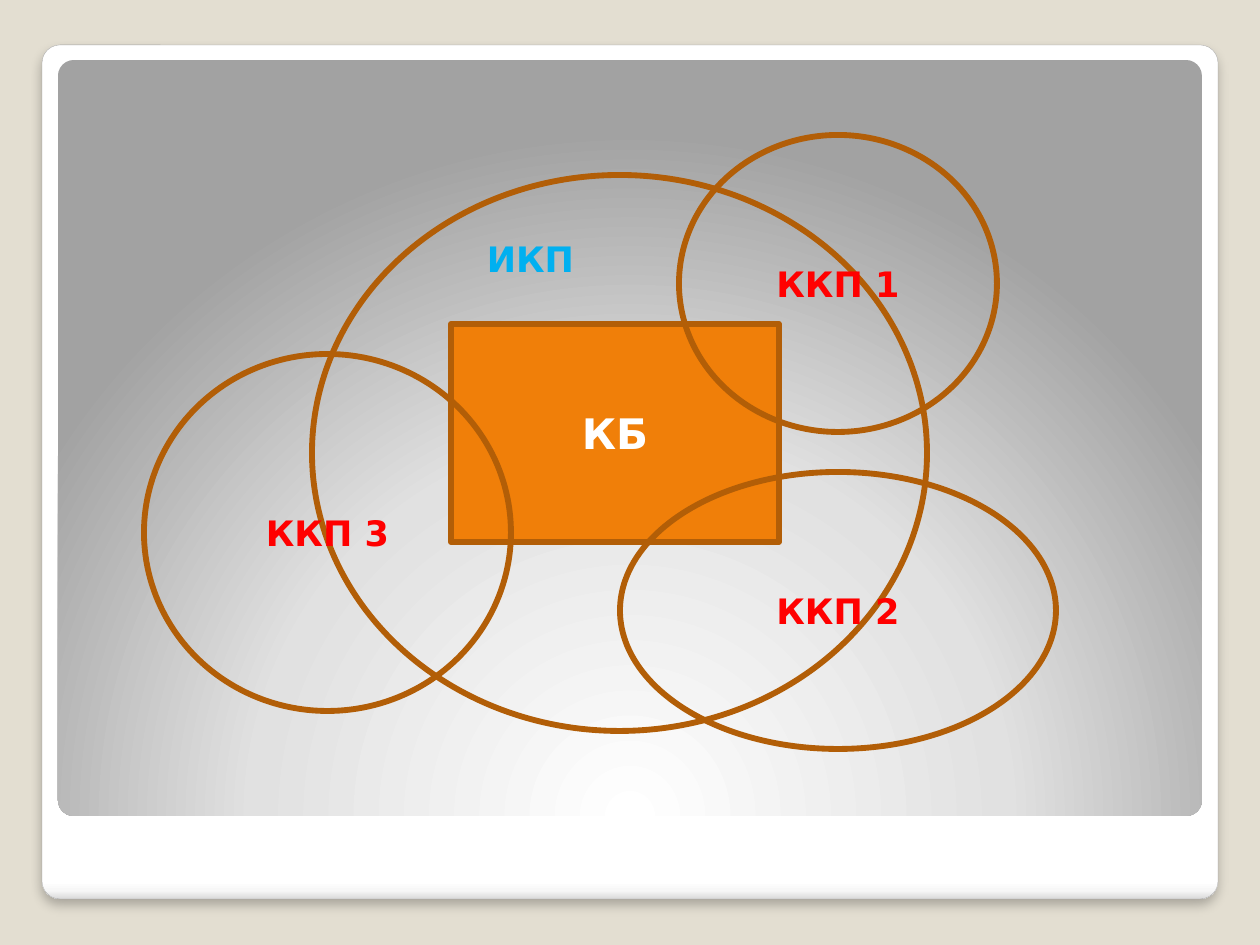
import pptx
import pptx.dml.color
import pptx.enum.shapes
import pptx.enum.text
import pptx.oxml
import pptx.oxml.ns
import pptx.util

EMU_PER_PX = 914400 / 126
FONT = "DejaVu Sans"
COLORS = {
    "background": "E3DED1", "frame edge": "A4A4A4", "box": "F07F09",
    "outline": "B25E07", "white": "FFFFFF", "red": "FF0000", "blue": "00B0F0",
}
KINDS = pptx.enum.shapes.MSO_SHAPE

# Boxes are left, top, width, height in px
FRAME = (42, 45, 1176, 854)
PANEL = (58, 60, 1144, 756)
FRAME_STOPS = [(0, "FFFFFF"), (98, "FFFFFF"), (99, "F7F7F7"), (100, "DADADA")]
PANEL_STOPS = [(0, "FFFFFF"), (55, "E1E1E1"), (100, "A2A2A2")]
DOWNWARD = '<a:lin ang="5400000" scaled="0"/>'
FROM_BELOW = ('<a:path path="circle"><a:fillToRect l="50000" t="175000" '
              'r="50000" b="-75000"/></a:path>')
SOFT_SHADOW = ('<a:outerShdw blurRad="76200" dist="50800" dir="5400000" algn="t" '
               'rotWithShape="0"><a:srgbClr val="000000"><a:alpha val="25000"/>'
               '</a:srgbClr></a:outerShdw>')

# kind, box, fill, label, label size, label colour
DIAGRAM = [
    (KINDS.FLOWCHART_PROCESS, (451, 324, 328, 218), "box", "КБ", 24, "white"),
    (KINDS.OVAL, (312, 175, 615, 556), None, "", 20, "red"),
    (KINDS.OVAL, (679, 135, 318, 297), None, "ККП 1", 20, "red"),
    (KINDS.OVAL, (620, 472, 436, 277), None, "ККП 2", 20, "red"),
    (KINDS.OVAL, (144, 354, 367, 357), None, "ККП 3", 20, "red"),
]
INNER_LABEL = ((441, 224, 179, 69), "ИКП", 20, "blue")


def px(length):
    return round(length * EMU_PER_PX)


def color(name):
    return pptx.dml.color.RGBColor.from_string(COLORS[name])


def xml(tag, content):
    namespace = pptx.oxml.ns.nsdecls("a")
    return pptx.oxml.parse_xml(f"<a:{tag} {namespace}>{content}</a:{tag}>")


def add_shape(kind, box):
    shape = slide.shapes.add_shape(kind, *map(px, box))
    shape.shadow.inherit = False
    return shape


def add_rounded(box, stops, direction):
    rounded = add_shape(KINDS.ROUNDED_RECTANGLE, box)
    rounded.adjustments[0] = 0.021
    rounded.line.fill.background()
    stop_xml = "".join(f'<a:gs pos="{at * 1000}"><a:srgbClr val="{shade}"/></a:gs>'
                       for at, shade in stops)
    gradient = xml("gradFill", f"<a:gsLst>{stop_xml}</a:gsLst>{direction}")
    rounded.element.spPr.find(pptx.oxml.ns.qn("a:prstGeom")).addnext(gradient)
    return rounded


def write_label(shape, label, size, shade):
    frame = shape.text_frame
    frame.text = label
    frame.word_wrap = True
    frame.vertical_anchor = pptx.enum.text.MSO_ANCHOR.MIDDLE
    paragraph = frame.paragraphs[0]
    paragraph.alignment = pptx.enum.text.PP_ALIGN.CENTER
    for run in paragraph.runs:
        run.font.name = FONT
        run.font.size = pptx.util.Pt(size)
        run.font.bold = True
        run.font.color.rgb = color(shade)


deck = pptx.Presentation()
deck.slide_width, deck.slide_height = px(1260), px(945)
slide = deck.slides.add_slide(deck.slide_layouts[6])
slide.background.fill.solid()
slide.background.fill.fore_color.rgb = color("background")

# White frame with a soft shadow, and the grey panel inside it
card = add_rounded(FRAME, FRAME_STOPS, DOWNWARD)
card.line.color.rgb = color("frame edge")
card.line.width = pptx.util.Pt(0.16)
effects = card.element.spPr.find(pptx.oxml.ns.qn("a:effectLst"))
effects.getparent().replace(effects, xml("effectLst", SOFT_SHADOW))
add_rounded(PANEL, PANEL_STOPS, FROM_BELOW)

# Central box and overlapping circles
for kind, box, fill, label, size, shade in DIAGRAM:
    part = add_shape(kind, box)
    if fill:
        part.fill.solid()
        part.fill.fore_color.rgb = color(fill)
    else:
        part.fill.background()
    part.line.color.rgb = color("outline")
    part.line.width = pptx.util.Pt(3.35)
    if label:
        write_label(part, label, size, shade)

# Label of the large circle
label_box, *label_style = INNER_LABEL
write_label(slide.shapes.add_textbox(*map(px, label_box)), *label_style)

deck.save("out.pptx")
